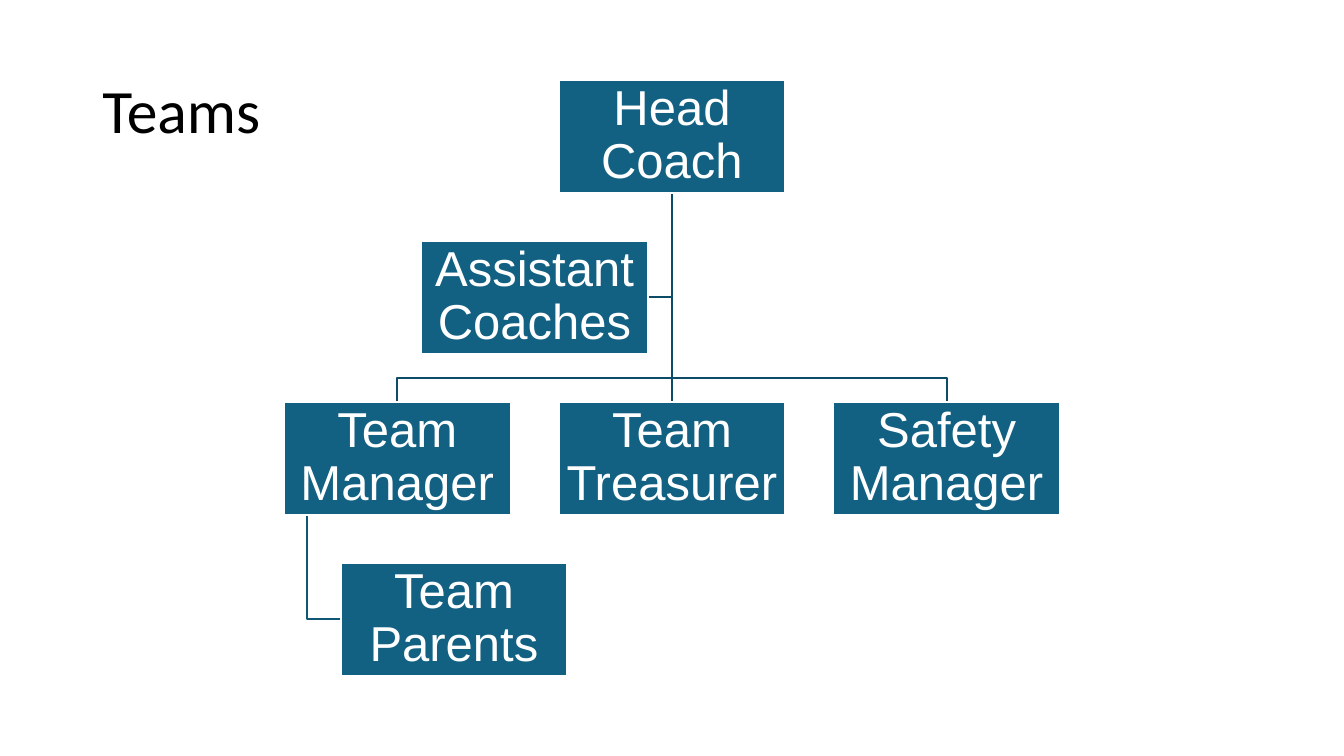
import pptx
import pptx.dml.color
import pptx.enum.shapes
import pptx.enum.text
import pptx.oxml
import pptx.util

Pt = pptx.util.Pt
RGBColor = pptx.dml.color.RGBColor
ANCHOR = pptx.enum.text.MSO_ANCHOR
ALIGN = pptx.enum.text.PP_ALIGN

TEAL = RGBColor(0x12, 0x60, 0x82)
BRANCH = RGBColor(0x0D, 0x4C, 0x67)
SUB_BRANCH = RGBColor(0x10, 0x56, 0x75)
WHITE = RGBColor(0xFF, 0xFF, 0xFF)
BLACK = RGBColor(0, 0, 0)

# Chart grid, in points
BOX_W, BOX_H = 162, 81
COL_STEP, ROW_STEP = 196.2, 115
LINE_W = 1.5


def write_text(s, text, font, size, color, align, inset_x, inset_y):
    tf = s.text_frame
    tf.text = text
    tf.word_wrap = True
    tf.vertical_anchor = ANCHOR.MIDDLE
    tf.margin_left = tf.margin_right = Pt(inset_x)
    tf.margin_top = tf.margin_bottom = Pt(inset_y)
    p = tf.paragraphs[0]
    p.alignment = align
    p.line_spacing = 0.9
    r = p.runs[0]
    r.font.name = font
    r.font.size = Pt(size)
    r.font.color.rgb = color


def add_title(slide, x, y, w, h):
    s = slide.shapes.add_textbox(Pt(x), Pt(y), Pt(w), Pt(h))
    write_text(s, "Teams", "Calibri", 44, BLACK, ALIGN.LEFT, 7.2, 3.6)


def add_box(slide, text, x, y):
    s = slide.shapes.add_shape(pptx.enum.shapes.MSO_SHAPE.RECTANGLE,
                               Pt(x), Pt(y), Pt(BOX_W), Pt(BOX_H))
    s.shadow.inherit = False
    s.fill.solid()
    s.fill.fore_color.rgb = TEAL
    s.line.color.rgb = WHITE
    s.line.width = Pt(LINE_W)
    write_text(s, text, "Arial", 35, WHITE, ALIGN.CENTER, 1.6, 1.6)


def add_elbow(slide, points, color):
    start, *rest = [(Pt(x), Pt(y)) for x, y in points]
    builder = slide.shapes.build_freeform(*start)
    builder.add_line_segments(rest, close=False)
    s = builder.convert_to_shape()
    s.shadow.inherit = False
    s.fill.background()
    s.line.color.rgb = color
    s.line.width = Pt(LINE_W)


def add_straight(slide, x, y1, y2, color):
    s = slide.shapes.add_connector(pptx.enum.shapes.MSO_CONNECTOR.STRAIGHT,
                                   Pt(x), Pt(y1), Pt(x), Pt(y2))
    s.line.color.rgb = color
    s.line.width = Pt(LINE_W)
    effects = pptx.oxml.ns.qn("a:effectLst")
    s._element.spPr.append(s._element.makeelement(effects, {}))


def add_org_chart(slide, x, y, w):
    center = x + w / 2
    head_x = center - BOX_W / 2
    rows = [y + i * ROW_STEP for i in range(4)]
    head_bottom = y + BOX_H
    assistant_x = head_x - COL_STEP / 2
    manager_x = head_x - COL_STEP
    parents_x = manager_x + BOX_W / 4

    # Lines from the head coach
    bus_y = rows[2] - (ROW_STEP - BOX_H) / 2
    assistant_y = rows[1] + BOX_H / 2
    add_elbow(slide, [(center, head_bottom), (center, assistant_y),
                      (assistant_x + BOX_W, assistant_y)], BRANCH)
    for side in (1, -1):
        end_x = center + side * COL_STEP
        add_elbow(slide, [(center, head_bottom), (center, bus_y),
                          (end_x, bus_y), (end_x, rows[2])], BRANCH)
    add_straight(slide, center, head_bottom, rows[2], BRANCH)

    # Line from the team manager to the parents
    drop_x = manager_x + BOX_W / 10
    parents_y = rows[3] + BOX_H / 2
    add_elbow(slide, [(drop_x, rows[2] + BOX_H), (drop_x, parents_y),
                      (parents_x, parents_y)], SUB_BRANCH)

    # Roles
    add_box(slide, "Head Coach", head_x, rows[0])
    add_box(slide, "Assistant Coaches", assistant_x, rows[1])
    for i, role in enumerate(["Team Manager", "Team Treasurer", "Safety Manager"]):
        add_box(slide, role, manager_x + i * COL_STEP, rows[2])
    add_box(slide, "Team Parents", parents_x, rows[3])


def main():
    prs = pptx.Presentation()
    prs.slide_width, prs.slide_height = Pt(960), Pt(540)
    slide = prs.slides.add_slide(prs.slide_layouts[6])
    add_title(slide, 66, 29, 828, 104)
    add_org_chart(slide, 203, 57, 554)
    prs.save("out.pptx")


if __name__ == "__main__":
    main()
